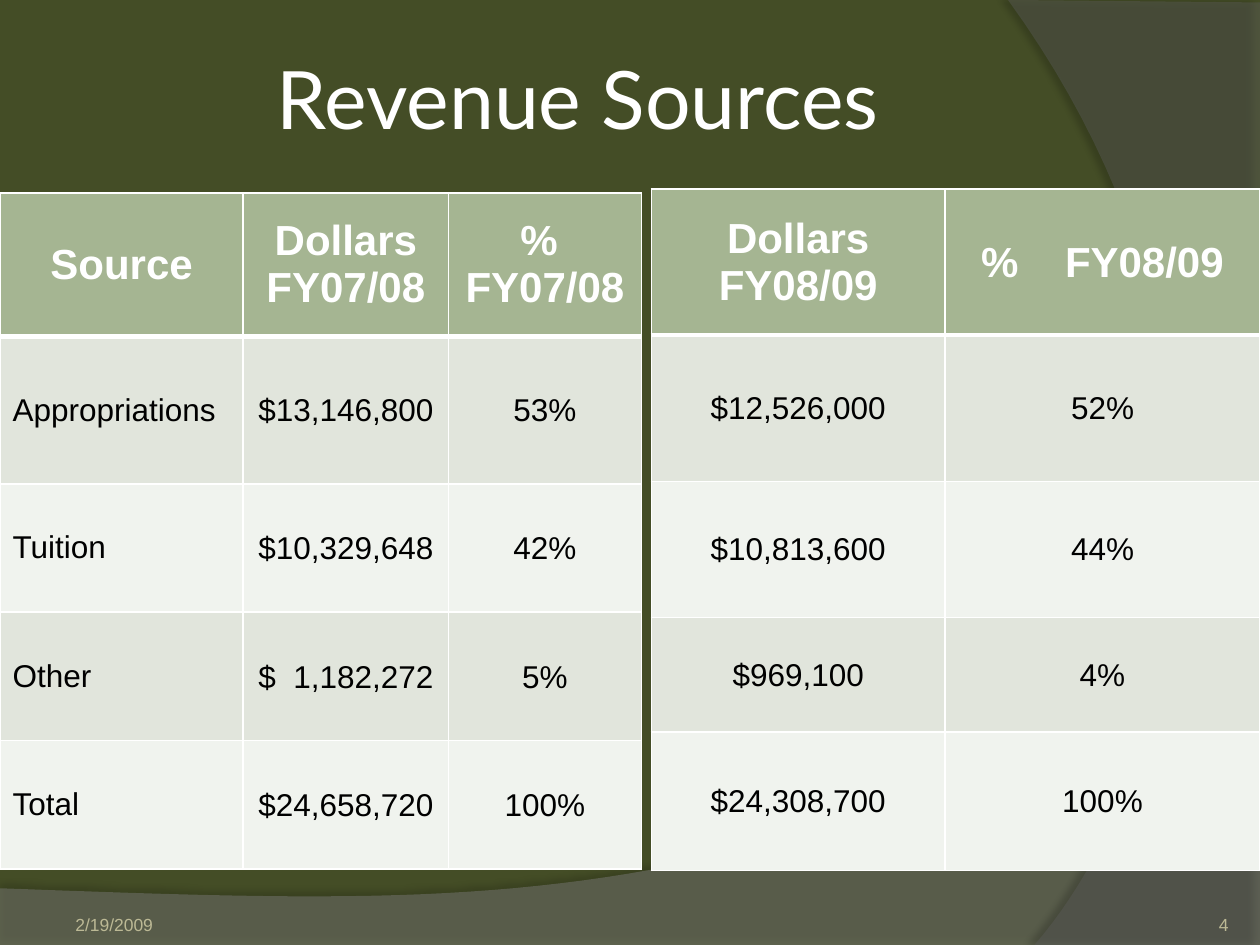
from lxml.etree import SubElement
from pptx import Presentation
from pptx.dml.color import RGBColor
from pptx.enum.text import MSO_ANCHOR as Anchor, PP_ALIGN as Align
from pptx.oxml.ns import qn
from pptx.util import Inches, Pt

COLORS = {
    "background": "444D26", "wave": "7F7F7F", "arc": "5E5E5E", "shadow": "000000",
    "white": "FFFFFF", "footer": "BCB995", "body": "000000",
    "header": "A5B592", "odd": "E1E5DC", "even": "F0F3EE",
}

# Content: text, box, font, size, colour, alignment, anchor, insets
TEXTS = [
    ("Revenue Sources", (0.5, 0, 8.17, 1.55), "Lato", 46, "white",
     Align.CENTER, Anchor.MIDDLE, (0.05, 0.05, 0.05, 0.05)),
    ("2/19/2009", (0.5, 7.02, 2.33, 0.4), "Arial", 10, "footer",
     Align.LEFT, Anchor.BOTTOM, (0.1, 0.05, 0.1, 0)),
    ("4", (8.92, 7.02, 0.83, 0.4), "Arial", 10, "footer",
     Align.RIGHT, Anchor.BOTTOM, (0, 0, 0, 0)),
]
PRIOR_YEAR = [
    ("Source", "Dollars FY07/08", "%  FY07/08"),
    ("Appropriations", "$13,146,800", "53%"),
    ("Tuition", "$10,329,648", "42%"),
    ("Other", "$  1,182,272", "5%"),
    ("Total", "$24,658,720", "100%"),
]
CURRENT_YEAR = [
    ("Dollars FY08/09", "%    FY08/09"),
    ("$12,526,000", "52%"),
    ("$10,813,600", "44%"),
    ("$969,100", "4%"),
    ("$24,308,700", "100%"),
]
# Rows, left, top, column widths, row heights, has a label column
TABLES = [
    (PRIOR_YEAR, 0, 1.53, (1.93, 1.63, 1.53), (1.14, 1.17, 1.02, 1.02, 1.02), True),
    (CURRENT_YEAR, 5.17, 1.5, (2.33, 2.5), (1.16, 1.16, 1.08, 0.91, 1.1), False),
]
# Corners, Bezier curve closing the outline, colour, opacity %,
# shadow opacity %, shadow distance in points, shadow direction in degrees
SWEEPS = [
    ([(0, 7.05), (0, 7.51), (10, 7.51)],
     [(10, 5.2), (5.59, 7.29), (3.91, 7.19), (0, 7.05)], "wave", 45, 35, 3.5, 270),
    ([(10, 0.02), (10, 7.5)],
     [(8.21, 7.5), (9.35, 6.19), (10.18, 3), (8, 0)], "arc", 40, 45, 4, 180),
]
TIGHT = (0.01, 0.01, 0.01, 0)
CURVE_STEPS = 48


def rgb(name):
    return RGBColor.from_string(COLORS[name])


def bezier(points):
    for step in range(CURVE_STEPS + 1):
        t = step / CURVE_STEPS
        weights = ((1 - t) ** 3, 3 * t * (1 - t) ** 2, 3 * t * t * (1 - t), t ** 3)
        yield tuple(sum(w * p[axis] for w, p in zip(weights, points)) for axis in (0, 1))


def set_alpha(color_element, percent):
    SubElement(color_element, qn("a:alpha"), val=str(percent * 1000))


def add_sweep(slide, corners, curve, color, opacity, shade, distance, direction):
    start, *rest = [(Inches(x), Inches(y)) for x, y in [*corners, *bezier(curve)]]
    builder = slide.shapes.build_freeform(*start)
    builder.add_line_segments(rest, close=True)
    sweep = builder.convert_to_shape()
    sweep.fill.solid()
    sweep.fill.fore_color.rgb = rgb(color)
    sweep.line.fill.background()
    sweep.shadow.inherit = False
    properties = sweep._element.spPr
    set_alpha(properties.find(qn("a:solidFill"))[0], opacity)
    shadow = SubElement(properties.find(qn("a:effectLst")), qn("a:outerShdw"),
                        blurRad=str(Pt(4)), dist=str(Pt(distance)),
                        dir=str(direction * 60000), algn="ctr", rotWithShape="0")
    set_alpha(SubElement(shadow, qn("a:srgbClr"), val=COLORS["shadow"]), shade)


def set_insets(target, insets):
    (target.margin_left, target.margin_top,
     target.margin_right, target.margin_bottom) = map(Inches, insets)


def format_text(frame, font_name, size, color, align, bold=False):
    frame.word_wrap = True
    paragraph = frame.paragraphs[0]
    paragraph.alignment = align
    font = paragraph.runs[0].font
    font.name, font.size, font.bold = font_name, Pt(size), bold
    font.color.rgb = rgb(color)


def add_borders(cell, bottom, top):
    properties = cell._tc.get_or_add_tcPr()
    for position, (side, width) in enumerate(
            [("lnL", 1), ("lnR", 1), ("lnT", top), ("lnB", bottom)]):
        line = properties.makeelement(qn(f"a:{side}"), {"w": str(Pt(width))})
        properties.insert(position, line)
        fill = SubElement(line, qn("a:solidFill"))
        SubElement(fill, qn("a:srgbClr"), val=COLORS["white"])


def add_revenue_table(slide, rows, left, top, widths, heights, labelled):
    table = slide.shapes.add_table(
        len(rows), len(widths), Inches(left), Inches(top),
        Inches(sum(widths)), Inches(sum(heights))).table
    for column, width in zip(table.columns, widths):
        column.width = Inches(width)
    for r, (values, height) in enumerate(zip(rows, heights)):
        table.rows[r].height = Inches(height)
        header = r == 0
        fill = "header" if header else ("even", "odd")[r % 2]
        for c, value in enumerate(values):
            cell = table.cell(r, c)
            cell.text_frame.text = value
            label = labelled and c == 0 and not header
            format_text(cell.text_frame, "Arial", 24 if header else 18,
                        "white" if header else "body",
                        Align.LEFT if label else Align.CENTER, header)
            cell.vertical_anchor = Anchor.MIDDLE
            if not label and not (labelled and header):
                set_insets(cell, TIGHT)
            cell.fill.solid()
            cell.fill.fore_color.rgb = rgb(fill)
            add_borders(cell, bottom=3 if header else 1, top=3 if r == 1 else 1)


presentation = Presentation()
presentation.slide_width, presentation.slide_height = Inches(10), Inches(7.5)
slide = presentation.slides.add_slide(presentation.slide_layouts[6])

# Background with its two translucent sweeps
slide.background.fill.solid()
slide.background.fill.fore_color.rgb = rgb("background")
for sweep in SWEEPS:
    add_sweep(slide, *sweep)

# Title, date and page number
for text, box, font_name, size, color, align, anchor, insets in TEXTS:
    frame = slide.shapes.add_textbox(*map(Inches, box)).text_frame
    frame.text = text
    frame.vertical_anchor = anchor
    set_insets(frame, insets)
    format_text(frame, font_name, size, color, align)

# Revenue tables, one per fiscal year
for revenue in TABLES:
    add_revenue_table(slide, *revenue)

presentation.save("out.pptx")
